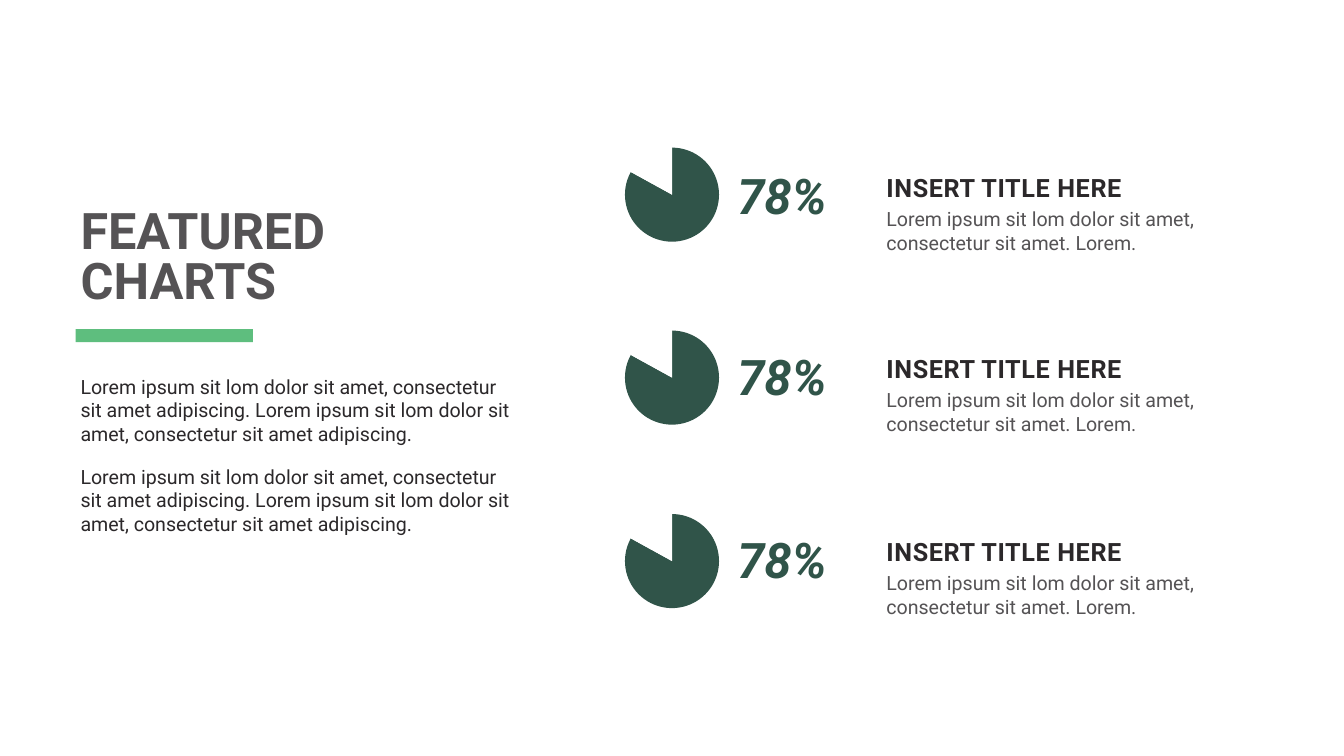
from lxml import etree
from pptx import Presentation
from pptx.chart.data import CategoryChartData
from pptx.dml.color import RGBColor
from pptx.enum import chart, shapes, text
from pptx.util import Pt

PX = 9144
INK, GREY, PINE, MINT, WHITE = "2B282A", "555355", "305449", "5EBE7E", "FFFFFF"
HEAD = ["FEATURED", "CHARTS"]
INTRO = ["Lorem ipsum sit lom dolor sit amet, consectetur sit amet adipiscing. "
         "Lorem ipsum sit lom dolor sit amet, consectetur sit amet adipiscing."] * 2
BLURB = "Lorem ipsum sit lom dolor sit amet, consectetur sit amet. Lorem."
ROWS = [
    {"pie": 292, "top": 321, "share": "78%", "title": "INSERT TITLE HERE", "note": BLURB},
    {"pie": 655, "top": 680, "share": "78%", "title": "INSERT TITLE HERE", "note": BLURB},
    {"pie": 1019, "top": 1043, "share": "78%", "title": "INSERT TITLE HERE", "note": BLURB},
]
PARTS = [("1", 83, PINE), ("2", 17, WHITE)]
PLOT = {"layoutTarget": "inner", "xMode": "edge", "yMode": "edge",
        "x": 0.005, "y": 0.005, "w": 0.99, "h": 0.988}


def px(*vals):
    """Turn px lengths into EMU."""
    return [v * PX for v in vals]


def rgb(code):
    """Turn a hex string into a colour."""
    return RGBColor.from_string(code)


def write(slide, at, lines, size, tint, bold=False, slant=False, low=False,
          inset=None, align=None, lead=None, after=None, track=None):
    """Add a text box with one paragraph per line."""
    frame = slide.shapes.add_textbox(*px(*at)).text_frame
    frame.word_wrap = True
    frame.auto_size = text.MSO_AUTO_SIZE.SHAPE_TO_FIT_TEXT
    frame.vertical_anchor = text.MSO_ANCHOR.BOTTOM if low else text.MSO_ANCHOR.TOP
    if inset is not None:
        frame.margin_left = frame.margin_right = inset * PX
        frame.margin_top = frame.margin_bottom = inset * PX
    for i, line in enumerate(lines):
        para = frame.add_paragraph() if i else frame.paragraphs[0]
        run = para.add_run()
        run.text = line
        if track:
            run._r.get_or_add_rPr().set("spc", str(track))
        para.alignment, para.line_spacing, para.space_after = align, lead, after
        font = para.font
        font.name, font.size, font.bold, font.italic = "Roboto", Pt(size), bold, slant
        font.color.rgb = rgb(tint)


def add_pie(slide, at):
    """Add a pie chart that fills its frame."""
    data = CategoryChartData()
    data.categories = [name for name, _, _ in PARTS]
    data.add_series("Series 1", [val for _, val, _ in PARTS])
    pie = slide.shapes.add_chart(chart.XL_CHART_TYPE.PIE, *px(*at), data).chart
    pie.has_legend = pie.has_title = False
    pie.font.name, pie.font.size = "Karla", Pt(10)
    pie.font.color.rgb = rgb(INK)
    plot = pie.plots[0]
    plot.vary_by_categories = False
    for i, (_, _, tint) in enumerate(PARTS):
        style = plot.series[0].points[i].format
        style.fill.solid()
        style.fill.fore_color.rgb = rgb(tint)
        style.line.fill.background()
    area = pie._chartSpace.chart.plotArea
    for old in area.findall("{*}layout"):
        area.remove(old)
    ns = "{%s}" % etree.QName(area).namespace
    layout = etree.Element(ns + "layout")
    manual = etree.SubElement(layout, ns + "manualLayout")
    for key, val in PLOT.items():
        etree.SubElement(manual, ns + key).set("val", str(val))
    area.insert(0, layout)


def main():
    """Build the slide."""
    deck = Presentation()
    deck.slide_width, deck.slide_height = px(2667, 1500)
    slide = deck.slides.add_slide(deck.slide_layouts[6])
    for row in ROWS:
        top = row["top"]
        add_pie(slide, (1239, row["pie"], 189, 189))
        write(slide, (1753, top + 84, 791, 105), [row["note"]], 28, GREY, inset=6)
        write(slide, (1753, top + 3, 791, 80), [row["title"]], 36, INK, bold=True,
              inset=6, align=text.PP_ALIGN.JUSTIFY, lead=1.2, track=90)
        write(slide, (1457, top, 268, 131), [row["share"]], 70, PINE, bold=True,
              slant=True, low=True, inset=6)
    write(slide, (150, 738, 875, 332), INTRO, 28, INK, after=Pt(28))
    write(slide, (150, 405, 875, 215), HEAD, 72, GREY, bold=True, low=True, lead=Pt(72))
    bar = slide.shapes.add_shape(shapes.MSO_SHAPE.RECTANGLE, *px(150, 653, 352, 26))
    bar.shadow.inherit = False
    bar.fill.solid()
    bar.fill.fore_color.rgb = rgb(MINT)
    bar.line.fill.background()
    deck.save("out.pptx")


if __name__ == "__main__":
    main()
